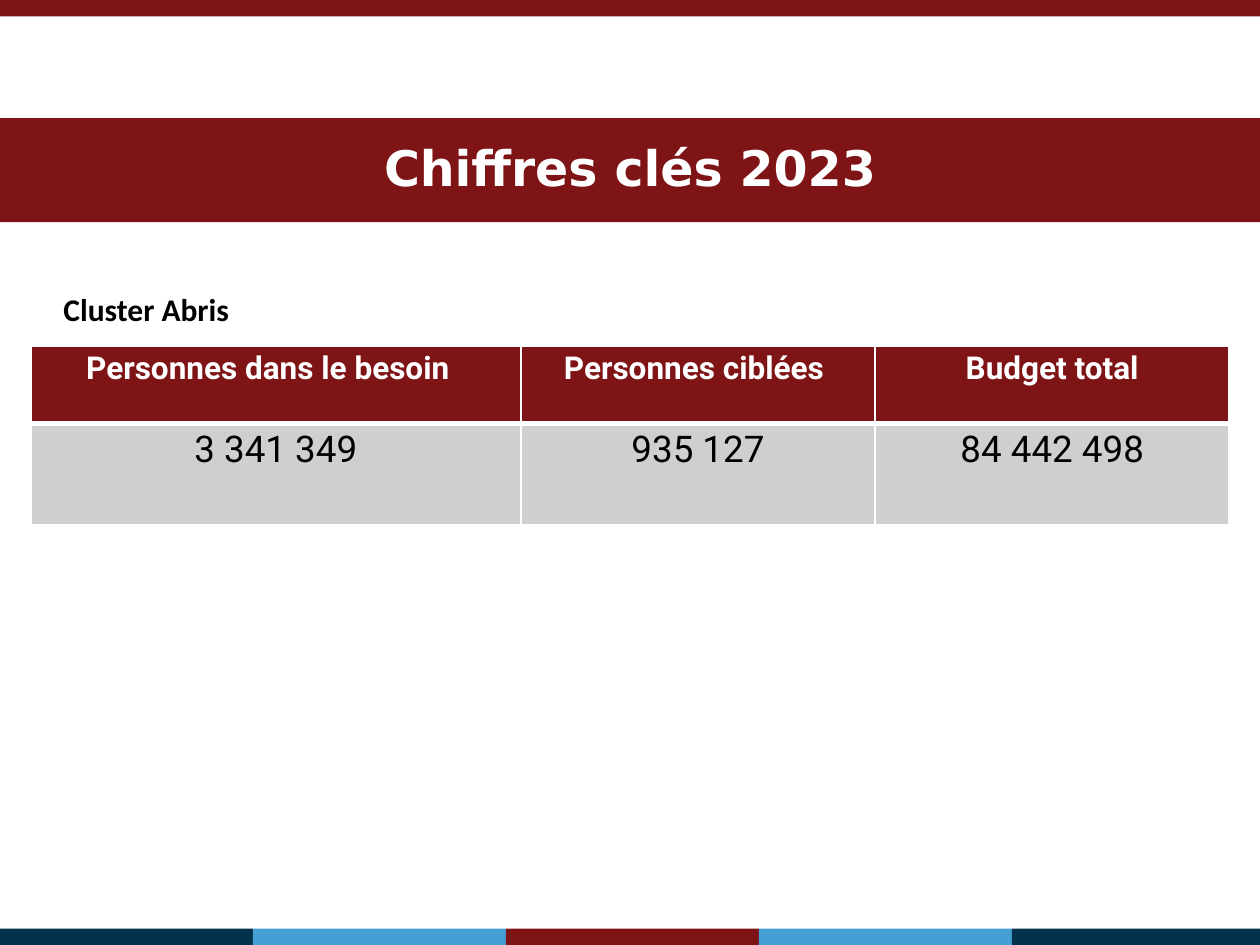
from lxml import etree
from pptx import Presentation
from pptx.dml.color import RGBColor
from pptx.enum.shapes import MSO_SHAPE
from pptx.enum.text import MSO_ANCHOR, PP_ALIGN
from pptx.oxml.ns import qn
from pptx.util import Cm, Pt

RECT = MSO_SHAPE.RECTANGLE
MIDDLE = MSO_ANCHOR.MIDDLE
CENTER, LEFT = PP_ALIGN.CENTER, PP_ALIGN.LEFT

TITLE = "Chiffres clés 2023"
SUBTITLE = "Cluster Abris"
ROWS = [
    ["Personnes dans le besoin", "Personnes ciblées", "Budget total"],
    ["3 341 349", "935 127", "84 442 498"],
]
FOOTER = ["navy", "blue", "red", "blue", "navy"]

THEME = {
    "red": "7F1416", "navy": "04314C", "blue": "459FD5",
    "grey": "D0CECE", "white": "FFFFFF", "black": "000000",
    "title": ("DejaVu Sans", 28, True, "white"),
    "subtitle": ("Calibri", 18, True, "black"),
    "header": ("Roboto", 18, True, "white"),
    "figure": ("Roboto", 21, False, "black"),
}

WIDTH, HEIGHT = 25.4, 19.05
BAR = 0.33
FOOTER_STEP = 5.1
COL_WIDTHS = [9.88, 7.14, 7.14]
ROW_HEIGHTS = [1.57, 2.03]
HEADER_INSETS = [0.5, 0.34, 0.18]
SIDE, EDGE = 0.18, 0.1


def color(name):
    """Return a theme colour."""
    return RGBColor.from_string(THEME[name])


def write(tf, text, style, align):
    """Put one styled paragraph in a text frame."""
    name, size, bold, ink = THEME[style]
    tf.text = text
    p = tf.paragraphs[0]
    p.alignment = align
    font = p.runs[0].font
    font.name, font.size, font.bold = name, Pt(size), bold
    font.color.rgb = color(ink)
    return p


def add_bar(slide, x, y, w, h, fill):
    """Draw a flat band without outline."""
    sp = slide.shapes.add_shape(RECT, Cm(x), Cm(y), Cm(w), Cm(h))
    sp.shadow.inherit = False
    sp.fill.solid()
    sp.fill.fore_color.rgb = color(fill)
    sp.line.fill.background()
    return sp


def set_borders(cell, bottom):
    """Give a cell white borders with its own bottom width."""
    tc_pr = cell._tc.get_or_add_tcPr()
    for side, width in (("L", 1), ("R", 1), ("T", 1), ("B", bottom)):
        ln = etree.SubElement(tc_pr, qn(f"a:ln{side}"), w=str(Pt(width)))
        fill = etree.SubElement(ln, qn("a:solidFill"))
        etree.SubElement(fill, qn("a:srgbClr"), val=THEME["white"])


def add_figures(slide):
    """Build the table of key figures."""
    table = slide.shapes.add_table(
        len(ROWS), len(COL_WIDTHS), Cm(0.62), Cm(6.97),
        Cm(sum(COL_WIDTHS)), Cm(sum(ROW_HEIGHTS))).table
    for col, width in zip(table.columns, COL_WIDTHS):
        col.width = Cm(width)
    for i, (row, height) in enumerate(zip(ROWS, ROW_HEIGHTS)):
        table.rows[i].height = Cm(height)
        head = i == 0
        for j, text in enumerate(row):
            cell = table.cell(i, j)
            cell.margin_left = Cm(SIDE)
            cell.margin_right = Cm(HEADER_INSETS[j] if head else SIDE)
            cell.margin_top = cell.margin_bottom = Cm(EDGE)
            set_borders(cell, 3 if head else 1)
            cell.fill.solid()
            cell.fill.fore_color.rgb = color("red" if head else "grey")
            write(cell.text_frame, text, "header" if head else "figure", CENTER)


def main():
    """Build and save the slide."""
    prs = Presentation()
    prs.slide_width, prs.slide_height = Cm(WIDTH), Cm(HEIGHT)
    s = prs.slides.add_slide(prs.slide_layouts[6])

    add_bar(s, 0, 0, WIDTH, BAR, "red")
    for i, fill in enumerate(FOOTER):
        x = i * FOOTER_STEP
        add_bar(s, x, HEIGHT - BAR, min(FOOTER_STEP, WIDTH - x), BAR, fill)

    tf = add_bar(s, 0, 2.38, WIDTH, 2.1, "red").text_frame
    tf.vertical_anchor = MIDDLE
    write(tf, TITLE, "title", CENTER).line_spacing = 0.9

    add_figures(s)

    tf = s.shapes.add_textbox(Cm(1.03), Cm(5.72), Cm(6.32), Cm(1.03)).text_frame
    tf.word_wrap = True
    write(tf, SUBTITLE, "subtitle", LEFT)

    prs.save("out.pptx")


if __name__ == "__main__":
    main()
